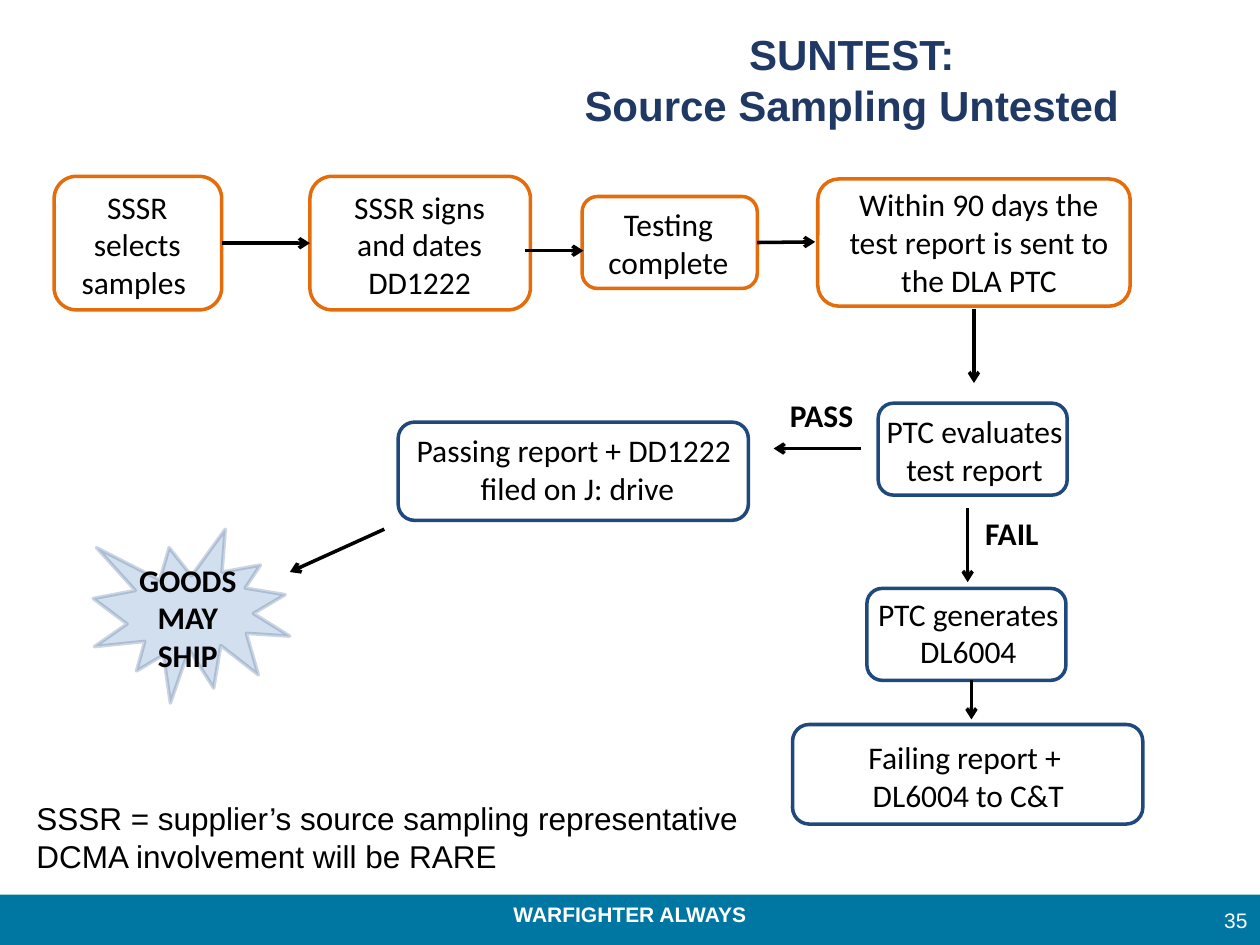
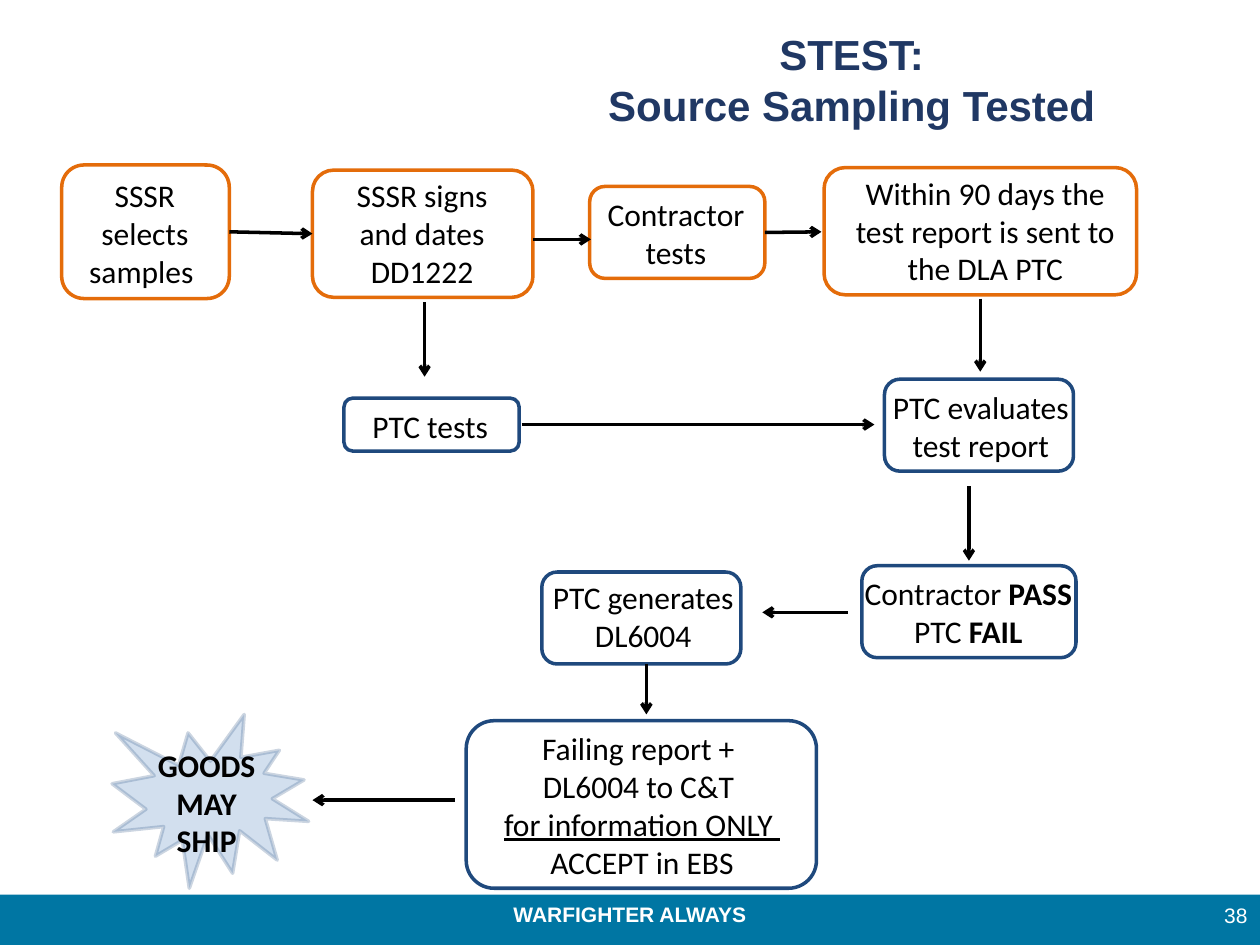
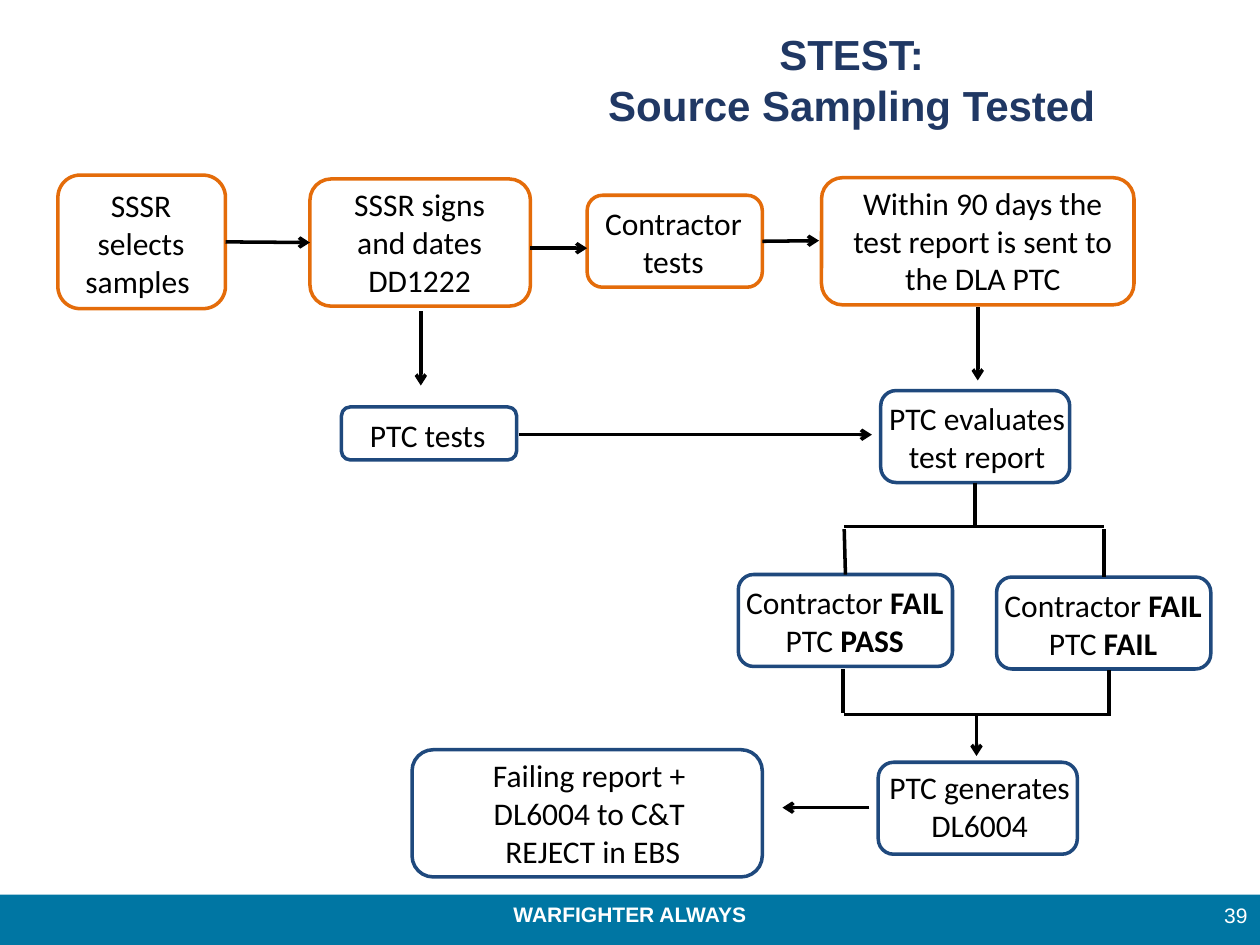
import lxml.etree
import pptx
import pptx.dml.color
import pptx.enum.shapes
import pptx.enum.text
import pptx.oxml.ns
import pptx.util

Inches = pptx.util.Inches
RGBColor = pptx.dml.color.RGBColor
ALIGN = pptx.enum.text.PP_ALIGN
ANCHOR = pptx.enum.text.MSO_ANCHOR
SHAPE = pptx.enum.shapes.MSO_SHAPE
STRAIGHT = pptx.enum.shapes.MSO_CONNECTOR.STRAIGHT
qn = pptx.oxml.ns.qn

TEAL = RGBColor(0x00, 0x76, 0xA3)
NAVY = RGBColor(0x20, 0x38, 0x64)
ORANGE = RGBColor(0xE4, 0x6C, 0x0A)
BLUE = RGBColor(0x1F, 0x49, 0x7D)
STAR_FILL = RGBColor(0x4F, 0x81, 0xBD)
STAR_LINE = RGBColor(0x3A, 0x5F, 0x8C)
BLACK = RGBColor(0, 0, 0)
WHITE = RGBColor(0xFF, 0xFF, 0xFF)
LINE_WIDTH = pptx.util.Pt(2)
SNAP = 0.015

BOLD = {"bold": True}
UNDERLINED = {"underline": True}

# kind: line colour, width, height, text offset x, text offset y, text width, paragraphs
BOXES = {
    "select": (ORANGE, 1.33, 1.06, 0.03, 0.04, 1.26, ["SSSR selects samples "]),
    "select split": (ORANGE, 1.33, 1.06, 0.03, 0.04, 1.26, ["SSSR", "selects samples "]),
    "sign": (ORANGE, 1.75, 1.01, 0.08, 0, 1.58, ["SSSR signs and dates DD1222"]),
    "sign tall": (ORANGE, 1.75, 1.06, 0.08, 0.04, 1.58, ["SSSR signs and dates DD1222"]),
    "complete": (ORANGE, 1.39, 0.73, 0, 0.02, 1.37, ["Testing complete"]),
    "contractor": (ORANGE, 1.39, 0.73, 0, 0.02, 1.37, ["Contractor tests"]),
    "send": (ORANGE, 2.48, 1.01, 0.08, 0, 2.4,
             ["Within 90 days the test report is sent to the DLA PTC"]),
    "evaluate": (BLUE, 1.5, 0.73, -0.2, 0.02, 1.93, ["PTC evaluates test report"]),
    "generate": (BLUE, 1.58, 0.73, -0.04, 0, 1.69, ["PTC generates DL6004"]),
    "PTC tests": (BLUE, 1.39, 0.42, 0, 0.02, 1.37, ["PTC tests"]),
    "file": (BLUE, 2.78, 0.78, 0, 0.02, 2.79,
             ["Passing report + DD1222", " filed on J: drive"]),
    "failing": (BLUE, 2.78, 0.79, 0, 0.06, 2.79, ["Failing report + ", "DL6004 to C&T"]),
    "accept": (BLUE, 2.78, 1.33, 0, 0.02, 2.79,
               ["Failing report + ", "DL6004 to C&T ",
                [("for information ONLY ", UNDERLINED)], "ACCEPT in EBS"]),
    "reject": (BLUE, 2.78, 1.01, 0.04, 0, 2.79,
               ["Failing report + ", "DL6004 to C&T ", "REJECT in EBS"]),
}
for contractor, ptc in (("PASS", "FAIL"), ("FAIL", "PASS"), ("FAIL", "FAIL")):
    BOXES[f"{contractor}/{ptc}"] = (
        BLUE, 1.7, 0.73, -0.12, 0.02, 1.93,
        [[("Contractor ", {}), (contractor, BOLD)], [("PTC ", {}), (ptc, BOLD)]])

SLIDES = [
    {
        "title": "SUNTEST:\vSource Sampling Untested",
        "number": "35", "number top": 7.1,
        "boxes": [("select split", 0.43, 1.4), ("sign tall", 2.46, 1.4),
                  ("complete", 4.62, 1.56), ("send", 6.49, 1.42),
                  ("evaluate", 6.97, 3.2), ("generate", 6.88, 4.67),
                  ("failing", 6.29, 5.75), ("file", 3.16, 3.35)],
        "arrows": [(1.76, 1.93, 2.46, 1.93), (4.17, 1.99, 4.63, 1.99),
                   (6.01, 1.92, 6.47, 1.92), (7.73, 2.45, 7.73, 3.04),
                   (7.71, 5.4, 7.71, 5.71), (7.68, 4.03, 7.68, 4.62),
                   (6.83, 3.56, 6.14, 3.56), (3.05, 4.2, 2.3, 4.54)],
        "star": (0.74, 4.2),
        "labels": [(["FAIL"], 7.72, 4.03, 0.63, 0.4, {"bold": True}),
                   (["PASS"], 6.17, 3.09, 0.71, 0.4, {"bold": True}),
                   (["SSSR = supplier’s source sampling representative",
                     "DCMA involvement will be RARE"],
                    0.19, 6.29, 5.82, 0.71, {"font": "Arial"})],
    },
    {
        "title": "STEST:\vSource Sampling Tested",
        "number": "38", "number top": 7.06,
        "boxes": [("select", 0.49, 1.31), ("sign", 2.48, 1.35),
                  ("contractor", 4.68, 1.48), ("send", 6.54, 1.33),
                  ("evaluate", 7.02, 3.01), ("PTC tests", 2.73, 3.16),
                  ("PASS/FAIL", 6.84, 4.49), ("generate", 4.3, 4.54),
                  ("accept", 3.7, 5.72)],
        "arrows": [(1.82, 1.84, 2.48, 1.86), (4.23, 1.9, 4.69, 1.9),
                   (6.06, 1.84, 6.52, 1.84), (7.78, 2.37, 7.78, 2.95),
                   (3.37, 2.4, 3.37, 2.99), (4.14, 3.37, 6.94, 3.37),
                   (7.69, 3.86, 7.69, 4.45), (6.73, 4.86, 6.05, 4.86),
                   (5.13, 5.27, 5.13, 5.67), (3.61, 6.35, 2.48, 6.35)],
        "star": (0.89, 5.67),
    },
    {
        "title": "STEST:\vSource Sampling Tested",
        "number": "39", "number top": 7.06,
        "boxes": [("select", 0.46, 1.39), ("sign", 2.46, 1.42),
                  ("contractor", 4.66, 1.55), ("send", 6.52, 1.41),
                  ("evaluate", 6.99, 3.1), ("PTC tests", 2.71, 3.23),
                  ("FAIL/PASS", 5.86, 4.56), ("FAIL/FAIL", 7.91, 4.58),
                  ("generate", 6.97, 6.05), ("reject", 3.27, 5.95)],
        "arrows": [(1.8, 1.91, 2.46, 1.93), (4.21, 1.97, 4.66, 1.97),
                   (6.04, 1.91, 6.5, 1.91), (7.76, 2.44, 7.76, 3.02),
                   (3.34, 2.47, 3.34, 3.06), (4.12, 3.45, 6.92, 3.45),
                   (6.9, 6.41, 6.21, 6.41), (7.75, 5.67, 7.75, 6)],
        "branches": [(7.74, 3.83, 7.74, 4.18), (8.76, 4.18, 6.7, 4.18),
                     (6.7, 4.2, 6.7, 4.56), (8.76, 4.2, 8.76, 4.58),
                     (6.69, 5.31, 6.69, 5.66), (8.8, 5.32, 8.8, 5.68),
                     (8.8, 5.67, 6.7, 5.67)],
    },
]


def write_text(shape, paragraphs, size=18, font="Calibri", color=BLACK, bold=False,
               align=ALIGN.CENTER, anchor=ANCHOR.TOP, wrap=True):
    """Fill a shape; a paragraph is a string or a list of (text, font attributes) runs."""
    frame = shape.text_frame
    frame.word_wrap = wrap
    frame.vertical_anchor = anchor
    for index, content in enumerate(paragraphs):
        paragraph = frame.add_paragraph() if index else frame.paragraphs[0]
        paragraph.alignment = align
        if isinstance(content, str):
            paragraph.text = content
        else:
            for text, attributes in content:
                run = paragraph.add_run()
                run.text = text
                for name, value in attributes.items():
                    setattr(run.font, name, value)
        for run in paragraph.runs:
            run.font.size = pptx.util.Pt(size)
            run.font.name = font
            run.font.color.rgb = color
            if bold:
                run.font.bold = True


def draw_line(slide, ends, sides, arrow):
    """Draw a line, joining each end that meets the middle of a box side."""
    connector = slide.shapes.add_connector(STRAIGHT, *map(Inches, ends))
    connector.line.color.rgb = BLACK
    connector.line.width = LINE_WIDTH
    properties = connector.element.spPr
    if arrow:
        lxml.etree.SubElement(properties.find(qn("a:ln")), qn("a:tailEnd"), type="arrow")
    lxml.etree.SubElement(properties, qn("a:effectLst"))
    for connect, (x, y) in ((connector.begin_connect, ends[:2]),
                            (connector.end_connect, ends[2:])):
        for box, site, side_x, side_y in sides:
            if abs(x - side_x) < SNAP and abs(y - side_y) < SNAP:
                connect(box, site)


presentation = pptx.Presentation()
presentation.slide_width = Inches(10)
presentation.slide_height = Inches(7.5)

layout = presentation.slide_layouts[5]
for placeholder in list(layout.placeholders)[1:]:
    layout.shapes.element.remove(placeholder.element)
title_frame = layout.placeholders[0]
title_frame.left, title_frame.top = Inches(4.01), Inches(0.18)
title_frame.width, title_frame.height = Inches(5.5), Inches(0.9)

slides = [presentation.slides.add_slide(layout) for content in SLIDES]

# The band and motto are built on a slide, then moved to the layout all slides share.
band = slides[0].shapes.add_shape(SHAPE.RECTANGLE, 0, Inches(7.1), Inches(10), Inches(0.4))
band.shadow.inherit = False
band.fill.solid()
band.fill.fore_color.rgb = TEAL
band.line.fill.background()
motto = slides[0].shapes.add_textbox(0, Inches(7.11), Inches(10), Inches(0.3))
write_text(motto, ["WARFIGHTER ALWAYS"], size=12, font="Arial", color=WHITE, bold=True)
for shared in (band, motto):
    layout.shapes.element.append(shared.element)

for slide, content in zip(slides, SLIDES):
    shapes = slide.shapes
    write_text(shapes.title, [content["title"]], size=24, font="Arial", color=NAVY,
               bold=True, anchor=ANCHOR.MIDDLE)
    number = shapes.add_textbox(Inches(9.5), Inches(content["number top"]),
                                Inches(0.5), Inches(0.4))
    write_text(number, [content["number"]], size=12, font="Arial", color=WHITE,
               align=ALIGN.RIGHT, anchor=ANCHOR.MIDDLE)

    sides = []
    for kind, left, top in content["boxes"]:
        color, width, height, offset_x, offset_y, text_width, paragraphs = BOXES[kind]
        box = shapes.add_shape(SHAPE.FLOWCHART_ALTERNATE_PROCESS, Inches(left), Inches(top),
                               Inches(width), Inches(height))
        box.shadow.inherit = False
        box.fill.background()
        box.line.color.rgb = color
        box.line.width = LINE_WIDTH
        caption = shapes.add_textbox(Inches(left + offset_x), Inches(top + offset_y),
                                     Inches(text_width), Inches(height - offset_y))
        write_text(caption, paragraphs)
        middle_x, middle_y = left + width / 2, top + height / 2
        sides += [(box, 0, middle_x, top), (box, 1, left, middle_y),
                  (box, 2, middle_x, top + height), (box, 3, left + width, middle_y)]

    for ends in content["arrows"]:
        draw_line(slide, ends, sides, arrow=True)
    for ends in content.get("branches", []):
        draw_line(slide, ends, sides, arrow=False)

    if "star" in content:
        left, top = content["star"]
        star = shapes.add_shape(SHAPE.EXPLOSION1, Inches(left), Inches(top),
                                Inches(1.56), Inches(1.38))
        star.shadow.inherit = False
        star.fill.solid()
        star.fill.fore_color.rgb = STAR_FILL
        star.line.color.rgb = STAR_LINE
        star.line.width = LINE_WIDTH
        for color_element in star.element.spPr.iter(qn("a:srgbClr")):
            lxml.etree.SubElement(color_element, qn("a:alpha"), val="25000")
        caption = shapes.add_textbox(Inches(left + 0.24), Inches(top + 0.2),
                                     Inches(1.02), Inches(1.01))
        write_text(caption, ["GOODS MAY SHIP"], bold=True)

    for paragraphs, left, top, width, height, style in content.get("labels", []):
        label = shapes.add_textbox(Inches(left), Inches(top), Inches(width), Inches(height))
        write_text(label, paragraphs, align=ALIGN.LEFT, wrap=False, **style)

presentation.save("out.pptx")
